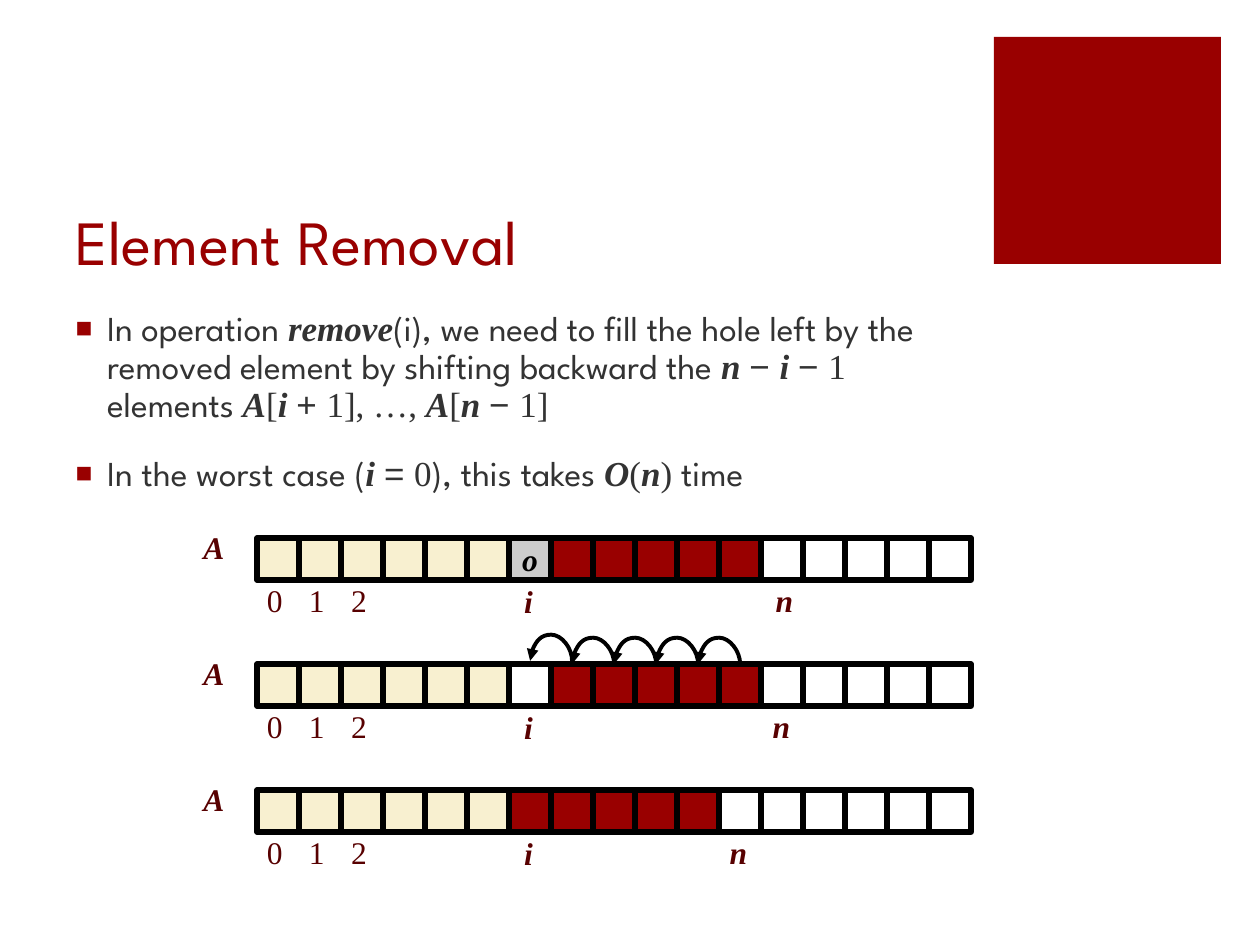
from lxml.etree import SubElement
from pptx import Presentation
from pptx.dml.color import RGBColor
from pptx.enum.shapes import MSO_CONNECTOR, MSO_SHAPE
from pptx.enum.text import MSO_ANCHOR, MSO_AUTO_SIZE, PP_ALIGN
from pptx.oxml.ns import qn
from pptx.util import Emu, Pt

PX = 914400 / 126
CELL, CELL_COUNT = 42, 17
RED, CREAM, GREY, WHITE, BLACK = "990000", "F8F0D0", "CCCCCC", "FFFFFF", "000000"
INK, MAROON = "333333", "580101"
SANS, SERIF, SIGN = "League Spartan", "Times New Roman", "Arial"

STYLES = {
    "text": {"name": SANS, "bold": False, "italic": False},
    "var": {"name": SERIF, "bold": True, "italic": True},
    "num": {"name": SERIF, "bold": False, "italic": False},
    "op": {"name": SIGN, "bold": False, "italic": False},
}

BULLETS = [
    [("text", "In operation "), ("var", "remove"),
     ("text", "(i), we need to fill the hole left by the removed element "
              "by shifting backward the "),
     ("var", "n "), ("op", "− "), ("var", "i "), ("op", "− "), ("num", "1"),
     ("text", " elements "), ("var", "A"), ("num", "["), ("var", "i "),
     ("op", "+ "), ("num", "1], …, "), ("var", "A"), ("num", "["),
     ("var", "n "), ("op", "− "), ("num", "1]")],
    [("text", "In the worst case ("), ("var", "i "), ("op", "= "), ("num", "0"),
     ("text", "), this takes "), ("var", "O"), ("num", "("), ("var", "n"),
     ("num", ")"), ("text", " time")],
]


def px(*lengths):
    return [Emu(round(length * PX)) for length in lengths]


def rgb(code):
    return RGBColor.from_string(code)


def add_run(paragraph, text, style, size, color):
    run = paragraph.add_run()
    run.text = text
    run.font.size = Pt(size)
    run.font.color.rgb = rgb(color)
    for attribute, value in STYLES[style].items():
        setattr(run.font, attribute, value)


def place(shape, box):
    for attribute, value in zip(("left", "top", "width", "height"), px(*box)):
        setattr(shape, attribute, value)


def add_square(shapes, box, fill, border=None):
    square = shapes.add_shape(MSO_SHAPE.RECTANGLE, *px(*box))
    square.shadow.inherit = False
    square.fill.solid()
    square.fill.fore_color.rgb = rgb(fill)
    if border:
        square.line.color.rgb = rgb(border)
        square.line.width = Pt(3)
    else:
        square.line.fill.background()
    return square


def add_label(shapes, box, text, style="var"):
    label = shapes.add_textbox(*px(*box))
    frame = label.text_frame
    for side in ("left", "top", "right", "bottom"):
        setattr(frame, f"margin_{side}", 0)
    frame.word_wrap = style == "var"
    frame.auto_size = MSO_AUTO_SIZE.SHAPE_TO_FIT_TEXT
    paragraph = frame.paragraphs[0]
    paragraph.alignment = PP_ALIGN.CENTER if style == "var" else PP_ALIGN.LEFT
    add_run(paragraph, text, style, 18, MAROON)


def fill_title(title, box):
    place(title, box)
    frame = title.text_frame
    frame.vertical_anchor = MSO_ANCHOR.BOTTOM
    frame.auto_size = MSO_AUTO_SIZE.NONE
    paragraph = frame.paragraphs[0]
    paragraph.alignment = PP_ALIGN.LEFT
    add_run(paragraph, "Element Removal", "text", 36, RED)


def add_bullet(paragraph):
    properties = paragraph._p.get_or_add_pPr()
    properties.set("marL", "228600")
    properties.set("indent", "-228600")
    color = SubElement(properties, qn("a:buClr"))
    SubElement(color, qn("a:srgbClr"), val=RED)
    SubElement(properties, qn("a:buSzPct"), val="80000")
    SubElement(properties, qn("a:buFont"), typeface=SIGN)
    SubElement(properties, qn("a:buChar"), char="■")


def fill_body(body, box):
    place(body, box)
    frame = body.text_frame
    frame.auto_size = MSO_AUTO_SIZE.NONE
    for index, runs in enumerate(BULLETS):
        paragraph = frame.add_paragraph() if index else frame.paragraphs[0]
        paragraph.line_spacing = 0.9
        paragraph.space_before = Pt(18)
        add_bullet(paragraph)
        for style, text in runs:
            add_run(paragraph, text, style, 20, INK)


def add_array(shapes, left, top, fills, n_offset, hole_text=None):
    """Draw one state of array A; left and top locate its first cell."""
    add_label(shapes, (left - 63, top - 10, 40, 50), "A")
    for index in range(3):
        add_label(shapes, (left + 10 + index * CELL, top + 43, 21, 50), str(index), "num")
    add_label(shapes, (left + n_offset, top + 43, 39, 50), "n")
    for index, fill in enumerate(fills):
        cell = add_square(shapes, (left + index * CELL, top, CELL, CELL), fill, BLACK)
        if hole_text and fill == GREY:
            frame = cell.text_frame
            frame.word_wrap = False
            frame.vertical_anchor = MSO_ANCHOR.MIDDLE
            frame.paragraphs[0].alignment = PP_ALIGN.CENTER
            add_run(frame.paragraphs[0], hole_text, "var", 18, BLACK)
    add_label(shapes, (left + 6 * CELL, top + 44, 39, 50), "i")


def add_shift_arc(shapes, center, base):
    """Arch over one cell border, with its arrowhead at the left foot."""
    half = CELL // 2
    arc = shapes.add_connector(
        MSO_CONNECTOR.CURVE, *px(center, base + half, center, base - half))
    # The bend is a multiple of the width, so the width must not be zero.
    arc.width = Emu(1588)
    arc.line.color.rgb = rgb(BLACK)
    arc.line.width = Pt(2.25)
    properties = arc._element.spPr
    properties.find(qn("a:xfrm")).set("rot", "5400000")
    guides = properties.find(qn("a:prstGeom")).get_or_add_avLst()
    SubElement(guides, qn("a:gd"), name="adj1", fmla="val -13200000")
    SubElement(properties.find(qn("a:ln")), qn("a:headEnd"), type="triangle")
    SubElement(properties, qn("a:effectLst"))


def add_shift_arcs(shapes, left, top):
    for index in range(5):
        base = top if index else top - 3
        add_shift_arc(shapes, left + (7 + index) * CELL, base)


def array_fills(hole, shifted):
    """Six kept cells, the hole if any, the shifted cells, then free cells."""
    used = [CREAM] * 6 + hole + [RED] * shifted
    return used + [WHITE] * (CELL_COUNT - len(used))


def main():
    deck = Presentation()
    deck.slide_width, deck.slide_height = px(1260, 945)
    slide = deck.slides.add_slide(deck.slide_layouts[1])
    add_square(slide.shapes, (994, 37, 227, 227), RED)
    fill_title(slide.shapes.title, (63, 126, 897, 158))
    fill_body(slide.placeholders[1], (63, 305, 897, 539))

    left, top, row_pitch = 257, 538, 126
    states = [([GREY], 508, "o"), ([WHITE], 505, None), ([], 462, None)]
    for row, (hole, n_offset, hole_text) in enumerate(states):
        group = slide.shapes.add_group_shape()
        row_top = top + row * row_pitch
        add_array(group.shapes, left, row_top, array_fills(hole, 5), n_offset, hole_text)
        if row == 1:
            add_shift_arcs(group.shapes, left, row_top)
    deck.save("out.pptx")


if __name__ == "__main__":
    main()
